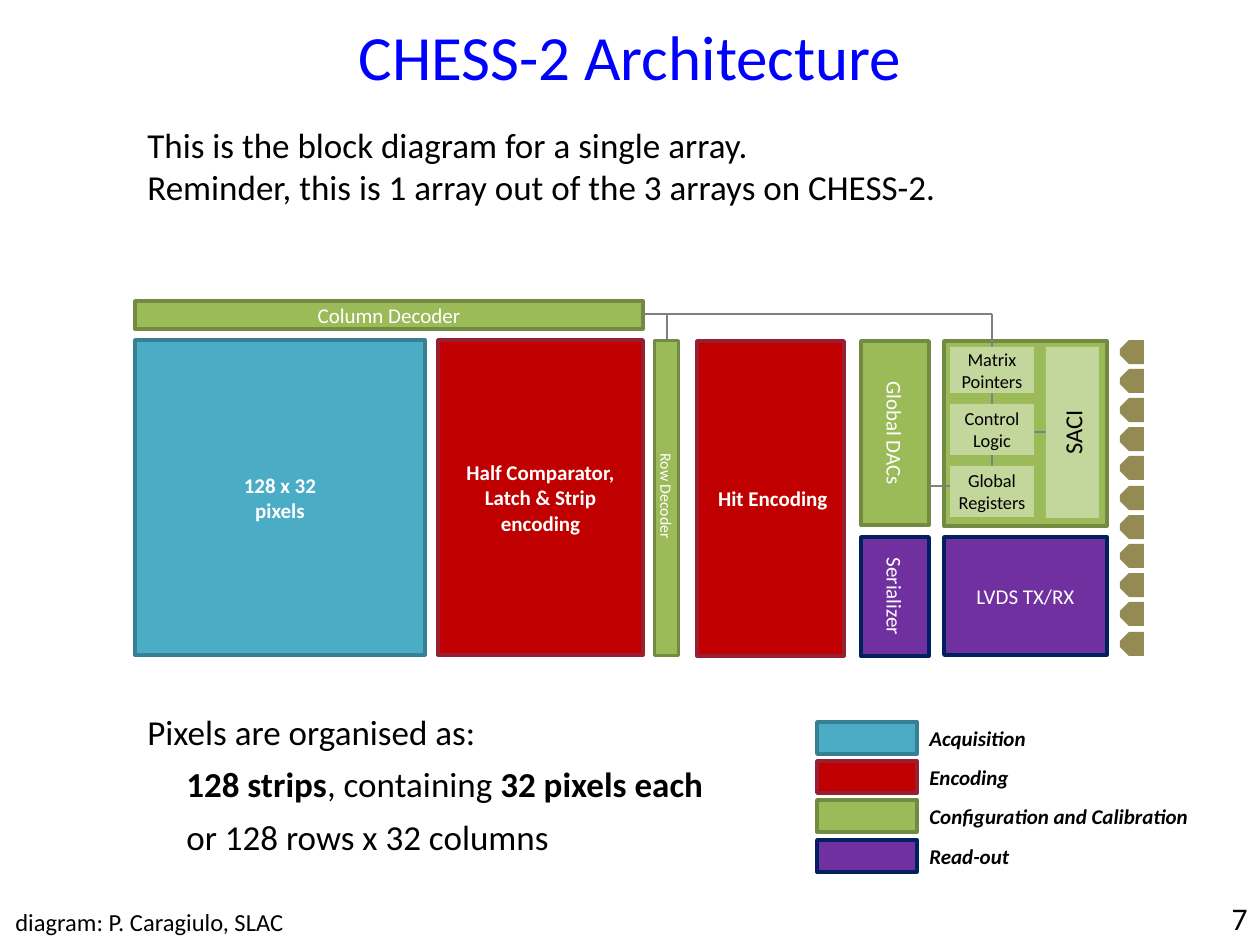
from dataclasses import dataclass
from typing import Optional

import pptx
import pptx.dml.color
import pptx.enum.shapes
import pptx.enum.text
import pptx.util
from lxml import etree

EMU_PER_PX = 914400 / 126
SHAPE = pptx.enum.shapes.MSO_SHAPE
ALIGN = pptx.enum.text.PP_ALIGN
ANCHOR = pptx.enum.text.MSO_ANCHOR


@dataclass(frozen=True)
class Theme:
    font: str = "Calibri"
    title: str = "0000FF"
    ink: str = "000000"
    light: str = "FFFFFF"
    wire: str = "808080"
    pad: str = "948A54"
    title_size: float = 36
    body_size: float = 20
    number_size: float = 18
    credit_size: float = 14
    block_size: float = 12
    inner_size: float = 10.5
    row_size: float = 9
    outline: float = 2
    wire_width: float = 1.5


THEME = Theme()


@dataclass(frozen=True)
class Role:
    fill: str
    line: Optional[str] = None
    ink: str = THEME.light


ACQUISITION = Role("4BACC6", "377F92")
ENCODING = Role("C00000", "981E32")
CONFIGURATION = Role("9BBB59", "738A42")
READOUT = Role("7030A0", "002060")
INNER = Role("C3D69B", ink=THEME.ink)


@dataclass(frozen=True)
class Area:
    left: int
    top: int
    width: int
    height: int


@dataclass(frozen=True)
class Span:
    text: str
    bold: bool = False
    italic: bool = False


@dataclass(frozen=True)
class Para:
    spans: tuple[Span, ...]
    indent: int = 0
    after: float = 0


@dataclass(frozen=True)
class Block:
    area: Area
    role: Role
    lines: tuple[str, ...] = ()
    size: float = THEME.block_size
    bold: bool = False
    vertical: str = "horz"
    tight: bool = False
    rotation: int = 0


@dataclass(frozen=True)
class Wire:
    x1: int
    y1: int
    x2: int
    y2: int


def px(value: int) -> pptx.util.Emu:
    return pptx.util.Emu(round(value * EMU_PER_PX))


def rgb(value: str) -> pptx.dml.color.RGBColor:
    return pptx.dml.color.RGBColor.from_string(value)


def place(area: Area) -> tuple:
    return px(area.left), px(area.top), px(area.width), px(area.height)


def write(shape, paras: list[Para], size: float, color: str,
          align=ALIGN.LEFT, anchor=ANCHOR.TOP, wrap: bool = True) -> None:
    frame = shape.text_frame
    frame.word_wrap = wrap
    frame.vertical_anchor = anchor
    for index, para in enumerate(paras):
        paragraph = frame.add_paragraph() if index else frame.paragraphs[0]
        paragraph.alignment = align
        paragraph.space_after = pptx.util.Pt(para.after)
        if para.indent:
            paragraph._p.get_or_add_pPr().set("marL", str(px(para.indent)))
        for span in para.spans:
            run = paragraph.add_run()
            run.text = span.text
            font = run.font
            font.name, font.size = THEME.font, pptx.util.Pt(size)
            font.bold, font.italic = span.bold, span.italic
            font.color.rgb = rgb(color)


def add_text(page, area: Area, paras: list[Para], size: float,
             color: str = THEME.ink, **layout) -> None:
    write(page.shapes.add_textbox(*place(area)), paras, size, color, **layout)


def add_shape(page, area: Area, role: Role, kind=SHAPE.RECTANGLE):
    shape = page.shapes.add_shape(kind, *place(area))
    shape.shadow.inherit = False
    shape.fill.solid()
    shape.fill.fore_color.rgb = rgb(role.fill)
    if role.line:
        shape.line.color.rgb = rgb(role.line)
        shape.line.width = pptx.util.Pt(THEME.outline)
    else:
        shape.line.fill.background()
    return shape


def add_block(page, block: Block) -> None:
    shape = add_shape(page, block.area, block.role)
    shape.rotation = block.rotation
    frame = shape.text_frame
    if block.tight:
        frame.margin_left = frame.margin_right = 0
        frame.margin_top = frame.margin_bottom = 0
    frame._txBody.bodyPr.set("vert", block.vertical)
    paras = [Para((Span(line, block.bold),)) for line in block.lines]
    write(shape, paras, block.size, block.role.ink, ALIGN.CENTER, ANCHOR.MIDDLE)


def add_wire(page, wire: Wire) -> None:
    line = page.shapes.add_connector(
        pptx.enum.shapes.MSO_CONNECTOR.STRAIGHT,
        px(wire.x1), px(wire.y1), px(wire.x2), px(wire.y2))
    line.line.color.rgb = rgb(THEME.wire)
    line.line.width = pptx.util.Pt(THEME.wire_width)
    etree.SubElement(line._element.spPr, pptx.oxml.ns.qn("a:effectLst"))


def inner_block(top: int, height: int, *lines: str) -> Block:
    return Block(Area(950, top, 84, height), INNER, lines, THEME.inner_size, tight=True)


OUTER_BLOCKS = [
    Block(Area(135, 340, 290, 315), ACQUISITION, ("128 x 32", "pixels"), bold=True),
    Block(Area(135, 301, 508, 28), CONFIGURATION, ("Column Decoder",)),
    Block(Area(438, 340, 205, 315), ENCODING,
          ("Half Comparator,", "Latch & Strip encoding"), bold=True),
    Block(Area(697, 341, 147, 315), ENCODING, (" Hit Encoding",), bold=True),
    Block(Area(509, 486, 315, 24), CONFIGURATION, ("Row Decoder ",),
          THEME.row_size, rotation=90),
    Block(Area(944, 341, 163, 185), CONFIGURATION),
    Block(Area(861, 341, 68, 184), CONFIGURATION, ("Global DACs",), vertical="vert"),
    Block(Area(944, 537, 163, 118), READOUT, ("LVDS TX/RX",), tight=True),
    Block(Area(861, 537, 68, 119), READOUT, ("Serializer",), vertical="vert", tight=True),
]
WIRES = [
    Wire(667, 314, 667, 340), Wire(643, 314, 992, 314), Wire(992, 314, 992, 347),
    Wire(992, 392, 992, 404), Wire(992, 455, 992, 467),
    Wire(1024, 432, 1053, 432), Wire(929, 486, 950, 486),
]
INNER_BLOCKS = [
    Block(Area(1046, 347, 53, 171), INNER, ("SACI",), 14, vertical="vert270"),
    inner_block(347, 46, "Matrix", "Pointers"),
    inner_block(404, 51, "Control Logic"),
    inner_block(466, 51, "Global Registers"),
]
LEGEND = [("Acquisition", ACQUISITION), ("Encoding", ENCODING),
          ("Configuration and Calibration", CONFIGURATION), ("Read-out", READOUT)]


def main() -> None:
    deck = pptx.Presentation()
    deck.slide_width, deck.slide_height = px(1260), px(945)
    page = deck.slides.add_slide(deck.slide_layouts[6])

    # Title, introduction, credit and page number
    add_text(page, Area(63, 16, 1134, 78), [Para((Span("CHESS-2 Architecture"),))],
             THEME.title_size, THEME.title, align=ALIGN.CENTER, anchor=ANCHOR.MIDDLE)
    add_text(page, Area(135, 117, 1108, 97), [
        Para((Span("This is the block diagram for a single array."),)),
        Para((Span("Reminder, this is 1 array out of the 3 arrays on CHESS-2."),)),
    ], THEME.body_size)
    add_text(page, Area(3, 901, 367, 43), [Para((Span("diagram: P. Caragiulo, SLAC"),))],
             THEME.credit_size)
    add_text(page, Area(1166, 893, 94, 50), [Para((Span("7"),))],
             THEME.number_size, align=ALIGN.RIGHT, anchor=ANCHOR.MIDDLE)

    # Block diagram, wires running behind the inner blocks
    for block in OUTER_BLOCKS:
        add_block(page, block)
    for wire in WIRES:
        add_wire(page, wire)
    for block in INNER_BLOCKS:
        add_block(page, block)

    # Eleven bond pads
    for index in range(11):
        pad = add_shape(page, Area(1120, 340 + index * 292 // 10, 24, 24),
                        Role(THEME.pad), SHAPE.SNIP_2_SAME_RECTANGLE)
        pad.adjustments[0], pad.adjustments[1] = 0.37, 0
        pad.rotation = 270

    # Legend
    for index, (name, role) in enumerate(LEGEND):
        top = 722 + index * 118 // 3
        add_shape(page, Area(817, top, 100, 32), role)
        add_text(page, Area(917, top - 3, 325, 38), [Para((Span(name, True, True),))],
                 THEME.block_size, wrap=False)

    # Pixel organisation
    add_text(page, Area(135, 704, 669, 161), [
        Para((Span("Pixels are organised as:"),), after=6),
        Para((Span("128 strips", True), Span(", containing "),
              Span("32 pixels each", True)), indent=39, after=6),
        Para((Span("or 128 rows x 32 columns"),), indent=39, after=6),
    ], THEME.body_size)

    deck.save("out.pptx")


if __name__ == "__main__":
    main()
